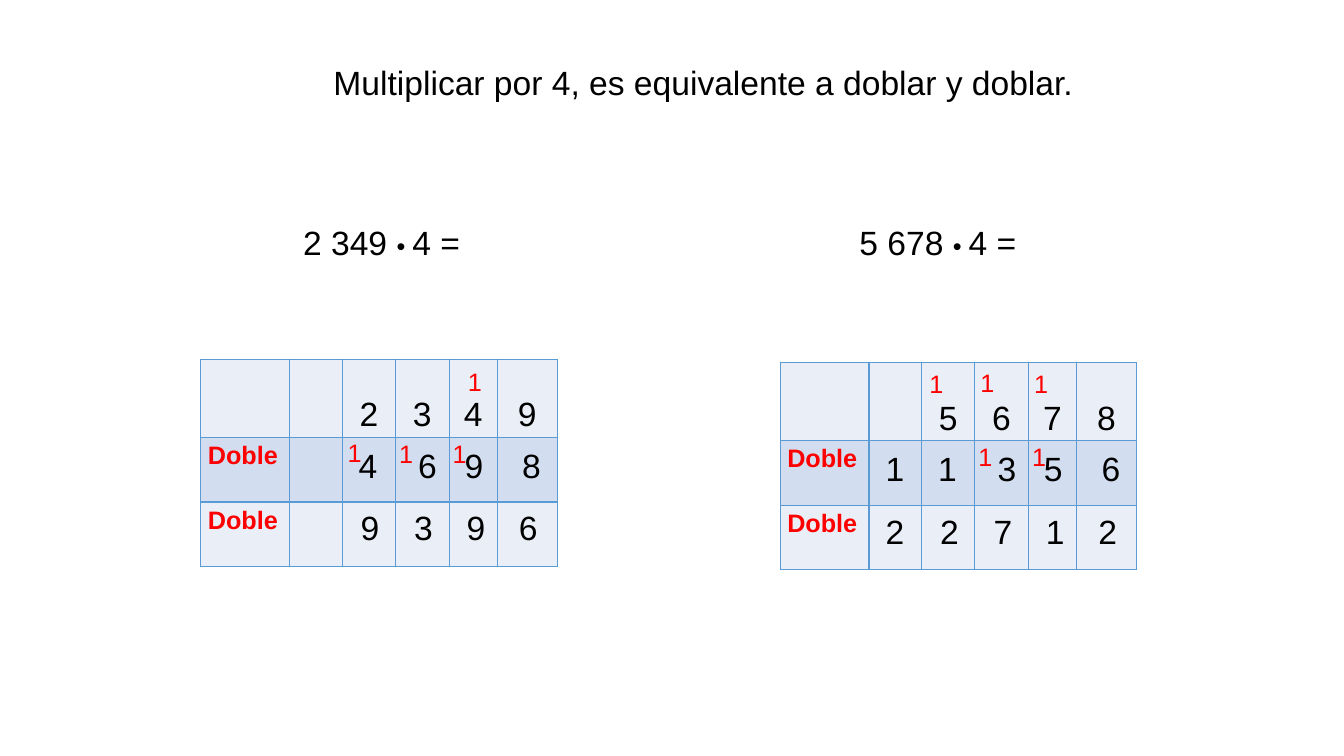
from lxml import etree
from pptx import Presentation
from pptx.dml.color import RGBColor
from pptx.enum import text
from pptx.oxml import ns
from pptx.util import Cm, Pt

BLACK = RGBColor(0x00, 0x00, 0x00)
RED = RGBColor(0xFF, 0x00, 0x00)
BORDER = RGBColor(0x5B, 0x9B, 0xD5)
LIGHT = RGBColor(0xEA, 0xEF, 0xF7)
BAND = RGBColor(0xD2, 0xDE, 0xEF)

TITLE = "Multiplicar por 4, es equivalente a doblar y doblar."
COLUMNS = [2.24, 1.33, 1.33, 1.36, 1.21, 1.51]
ROWS = [1.94, 1.63, 1.62]
DOUBLES_X = [[2.41, 3.73, 5.23, 6.4, 7.85], [2.41, 3.78, 5.13, 6.45, 7.77]]
DOUBLES_Y = [2.03, 3.61]

EXERCISES = [
    {
        "number": "2 349", "expression_x": 7.39, "table": (5.06, 9.05),
        "digits": "2349", "doubles": [" 4698", " 9396"],
        "carries": [(6.48, -0.05), (3.45, 1.73), (4.75, 1.75), (6.1, 1.75)],
    },
    {
        "number": "5 678", "expression_x": 21.41, "table": (19.66, 9.14),
        "digits": "5678", "doubles": ["11356", "22712"],
        "carries": [(3.51, -0.1), (4.8, -0.13), (6.15, -0.1),
                    (4.75, 1.73), (6.1, 1.73)],
    },
]

DIGIT = {"name": "Arial", "size": Pt(24), "bold": False}
DOT = {"name": "Arial", "size": Pt(18), "bold": False}
LABEL = {"name": "Arial", "size": Pt(18), "bold": True}
SPACED = {"line_spacing": 1.15, "space_after": Pt(10)}
CENTERED = {"alignment": text.PP_ALIGN.CENTER, "line_spacing": 1.15}
LEFT = {"alignment": text.PP_ALIGN.LEFT}
MARGINS = {"margin_left": Cm(0.18), "margin_right": Cm(0.18),
           "margin_top": 0, "margin_bottom": 0}


def apply(target, values):
    for key, value in values.items():
        setattr(target, key, value)


def write(tf, runs, layout, color=BLACK):
    p = tf.paragraphs[0]
    apply(p, layout)
    for content, font in runs:
        r = p.add_run()
        r.text = content
        apply(r.font, font)
        r.font.color.rgb = color


def add_text(s, x, y, w, h, runs, layout, color=BLACK):
    tf = s.shapes.add_textbox(Cm(x), Cm(y), Cm(w), Cm(h)).text_frame
    apply(tf, {"word_wrap": True, "auto_size": text.MSO_AUTO_SIZE.SHAPE_TO_FIT_TEXT})
    write(tf, runs, layout, color)


def outline(cell):
    props = cell._tc.get_or_add_tcPr()
    for i, side in enumerate(("lnL", "lnR", "lnT", "lnB")):
        line = etree.Element(ns.qn("a:" + side), w=str(Pt(1)))
        fill = etree.SubElement(line, ns.qn("a:solidFill"))
        etree.SubElement(fill, ns.qn("a:srgbClr"), val=str(BORDER))
        props.insert(i, line)


def add_grid(s, x, y, digits):
    table = s.shapes.add_table(len(ROWS), len(COLUMNS), Cm(x), Cm(y),
                               Cm(sum(COLUMNS)), Cm(sum(ROWS))).table
    for column, width in zip(table.columns, COLUMNS):
        column.width = Cm(width)
    for i, (row, height) in enumerate(zip(table.rows, ROWS)):
        row.height = Cm(height)
        for cell in row.cells:
            apply(cell, MARGINS)
            cell.fill.solid()
            cell.fill.fore_color.rgb = BAND if i == 1 else LIGHT
            outline(cell)
        if i:
            write(row.cells[0].text_frame, [("Doble", LABEL)], SPACED, RED)
    for column, digit in enumerate(digits, 2):
        cell = table.cell(0, column)
        cell.margin_top = Cm(0.8)
        write(cell.text_frame, [(digit, DIGIT)], CENTERED)


def add_exercise(s, exercise):
    x, y = exercise["table"]
    expression = [(exercise["number"] + " ", DIGIT), ("• ", DOT), ("4 =", DIGIT)]
    add_text(s, exercise["expression_x"], 5.46, 4.75, 1.27, expression, LEFT)
    add_grid(s, x, y, exercise["digits"])
    for number, xs, dy in zip(exercise["doubles"], DOUBLES_X, DOUBLES_Y):
        for digit, dx in zip(number, xs):
            if digit != " ":
                add_text(s, x + dx, y + dy, 0.86, 1.27, [(digit, DIGIT)], LEFT)
    for dx, dy in exercise["carries"]:
        add_text(s, x + dx, y + dy, 0.76, 1.07, [("1", DOT)], {**SPACED, **CENTERED}, RED)


def main():
    prs = Presentation()
    apply(prs, {"slide_width": Cm(33.87), "slide_height": Cm(19.05)})
    s = prs.slides.add_slide(prs.slide_layouts[5])
    title = s.shapes.title
    apply(title, {"left": Cm(8.15), "top": Cm(1.27), "width": Cm(19.35), "height": Cm(1.35)})
    apply(title.text_frame, {"word_wrap": True, "auto_size": text.MSO_AUTO_SIZE.NONE,
                             "vertical_anchor": text.MSO_ANCHOR.TOP})
    write(title.text_frame, [(TITLE, DIGIT)], {**LEFT, **SPACED})
    for exercise in EXERCISES:
        add_exercise(s, exercise)
    prs.save("out.pptx")


if __name__ == "__main__":
    main()
